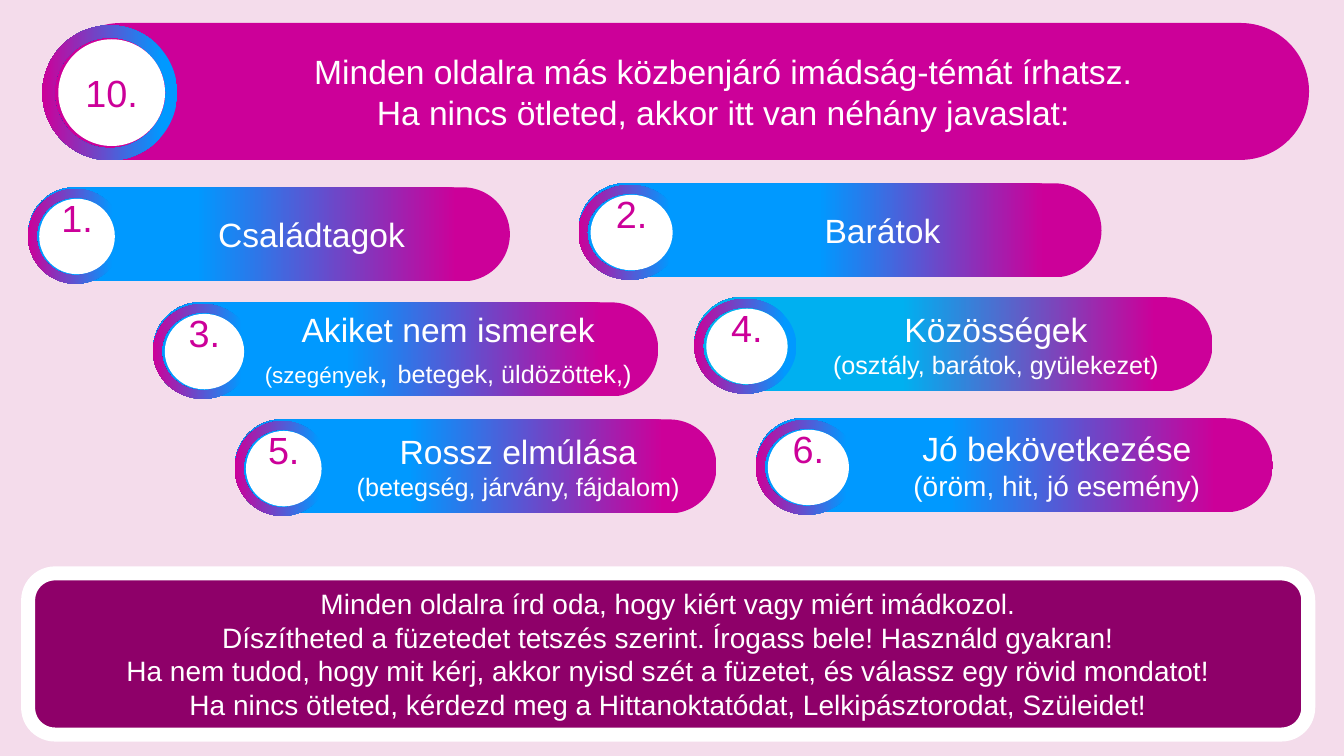
import pptx
import pptx.util
import pptx.dml.color
import pptx.enum.shapes
import pptx.enum.text

Cm, Pt = pptx.util.Cm, pptx.util.Pt
SHAPE = pptx.enum.shapes.MSO_SHAPE
FONT = "Arial"
COLORS = {
    "back": "F4DCEB",
    "pink": "CC0099",
    "blue": "0099FF",
    "sky": "00B0F0",
    "plum": "8E0069",
    "white": "FFFFFF",
}
TITLE = ("Minden oldalra más közbenjáró imádság-témát írhatsz.\n"
         "Ha nincs ötleted, akkor itt van néhány javaslat:")
ADVICE = [
    "Minden oldalra írd oda, hogy kiért vagy miért imádkozol.",
    "Díszítheted a füzetedet tetszés szerint. Írogass bele! Használd gyakran!",
    "Ha nem tudod, hogy mit kérj, akkor nyisd szét a füzetet, és válassz egy rövid mondatot!",
    "Ha nincs ötleted, kérdezd meg a Hittanoktatódat, Lelkipásztorodat, Szüleidet!",
]
# left, top, width in cm; end colour and its stop; lines of (text, size) runs
TOPICS = [
    (0.71, 4.72, 12.14, "blue", 0.65, [[("Családtagok", 24)]]),
    (14.58, 4.62, 13.18, "blue", 0.54, [[("Barátok", 24)]]),
    (3.86, 7.62, 12.73, "blue", 0.62,
     [[("Akiket nem ismerek", 24)],
      [("(szegények", 16), (", ", 24), ("betegek, üldözöttek,)", 18)]]),
    (17.5, 7.49, 13.06, "sky", 0.6,
     [[("Közösségek", 24)], [("(osztály, barátok, gyülekezet)", 18)]]),
    (5.92, 10.57, 12.14, "blue", 0.64,
     [[("Rossz elmúlása", 24)], [("(betegség, járvány, fájdalom)", 18)]]),
    (19.05, 10.54, 13.03, "blue", 0.63,
     [[("Jó bekövetkezése", 24)], [("(öröm, hit, jó esemény)", 20)]]),
]


def color(name):
    return pptx.dml.color.RGBColor.from_string(COLORS[name])


def paint(fill, name):
    fill.solid()
    fill.fore_color.rgb = color(name)


def blend(fill, *stops):
    """Fill with two (position, colour) stops running right to left."""
    fill.gradient()
    fill.gradient_angle = 180
    for stop, (place, name) in zip(fill.gradient_stops, stops):
        stop.position = place
        stop.color.rgb = color(name)


def add_form(slide, kind, left, top, width, height):
    form = slide.shapes.add_shape(kind, Cm(left), Cm(top), Cm(width), Cm(height))
    form.shadow.inherit = False
    form.line.fill.background()
    return form


def set_frame(frame, left=0.25, top=0.13, right=0.25, bottom=0.13):
    frame.margin_left, frame.margin_right = Cm(left), Cm(right)
    frame.margin_top, frame.margin_bottom = Cm(top), Cm(bottom)
    frame.vertical_anchor = pptx.enum.text.MSO_ANCHOR.MIDDLE
    frame.word_wrap = True


def style(frame, name, size=None):
    for para in frame.paragraphs:
        para.alignment = pptx.enum.text.PP_ALIGN.CENTER
        for run in para.runs:
            run.font.name = FONT
            run.font.color.rgb = color(name)
            if size:
                run.font.size = Pt(size)


def add_ring(slide, left, top, width, height):
    ring = add_form(slide, SHAPE.DONUT, left, top, width, height)
    ring.adjustments[0] = 0.089
    blend(ring.fill, (0.11, "blue"), (1, "pink"))


def add_dot(slide, label, left, top, width, height, lift=0):
    """White disc with a number, raised by half of lift."""
    dot = add_form(slide, SHAPE.OVAL, left, top, width, height)
    paint(dot.fill, "white")
    frame = dot.text_frame
    set_frame(frame, 0, 0, 0, lift)
    frame.word_wrap = False
    frame.text = label
    style(frame, "pink", 27)


def add_topic(slide, label, left, top, width, end, stop, lines):
    pill = add_form(slide, SHAPE.ROUNDED_RECTANGLE, left, top, width, 2.37)
    pill.adjustments[0] = 0.5
    blend(pill.fill, (0.11, "pink"), (stop, end))
    frame = pill.text_frame
    set_frame(frame, left=2.39)
    for row, parts in enumerate(lines):
        para = frame.add_paragraph() if row else frame.paragraphs[0]
        for text, size in parts:
            run = para.add_run()
            run.text = text
            run.font.size = Pt(size)
    style(frame, "white")
    add_ring(slide, left, top + 0.04, width * 0.197, 2.39)
    add_dot(slide, label, left + width * 0.023, top + 0.29, width * 0.157, 1.9, 0.98)


def add_header(slide):
    box = (1.32, 0.58, 31.67, 3.45)
    band = add_form(slide, SHAPE.ROUNDED_RECTANGLE, *box)
    band.adjustments[0] = 0.5
    paint(band.fill, "pink")
    title = slide.shapes.title
    title.left, title.top, title.width, title.height = map(Cm, box)
    frame = title.text_frame
    frame.text = TITLE
    frame.auto_size = pptx.enum.text.MSO_AUTO_SIZE.NONE
    set_frame(frame, left=2.39)
    style(frame, "white", 24)
    band.element.addnext(title.element)
    add_ring(slide, 1.07, 0.64, 3.4, 3.4)
    add_dot(slide, "10.", 1.47, 0.99, 2.69, 2.69)


def add_advice(slide):
    box = add_form(slide, SHAPE.ROUNDED_RECTANGLE, 0.71, 14.45, 32.26, 4.06)
    paint(box.fill, "plum")
    paint(box.line.fill, "white")
    box.line.width = Pt(10)
    set_frame(box.text_frame)
    box.text_frame.text = "\n".join(ADVICE)
    style(box.text_frame, "white", 20)


def main():
    deck = pptx.Presentation()
    deck.slide_width, deck.slide_height = Cm(33.87), Cm(19.05)
    slide = deck.slides.add_slide(deck.slide_layouts[5])
    paint(slide.background.fill, "back")
    add_header(slide)
    for index, topic in enumerate(TOPICS, 1):
        add_topic(slide, f"{index}.", *topic)
    add_advice(slide)
    deck.save("out.pptx")


if __name__ == "__main__":
    main()
